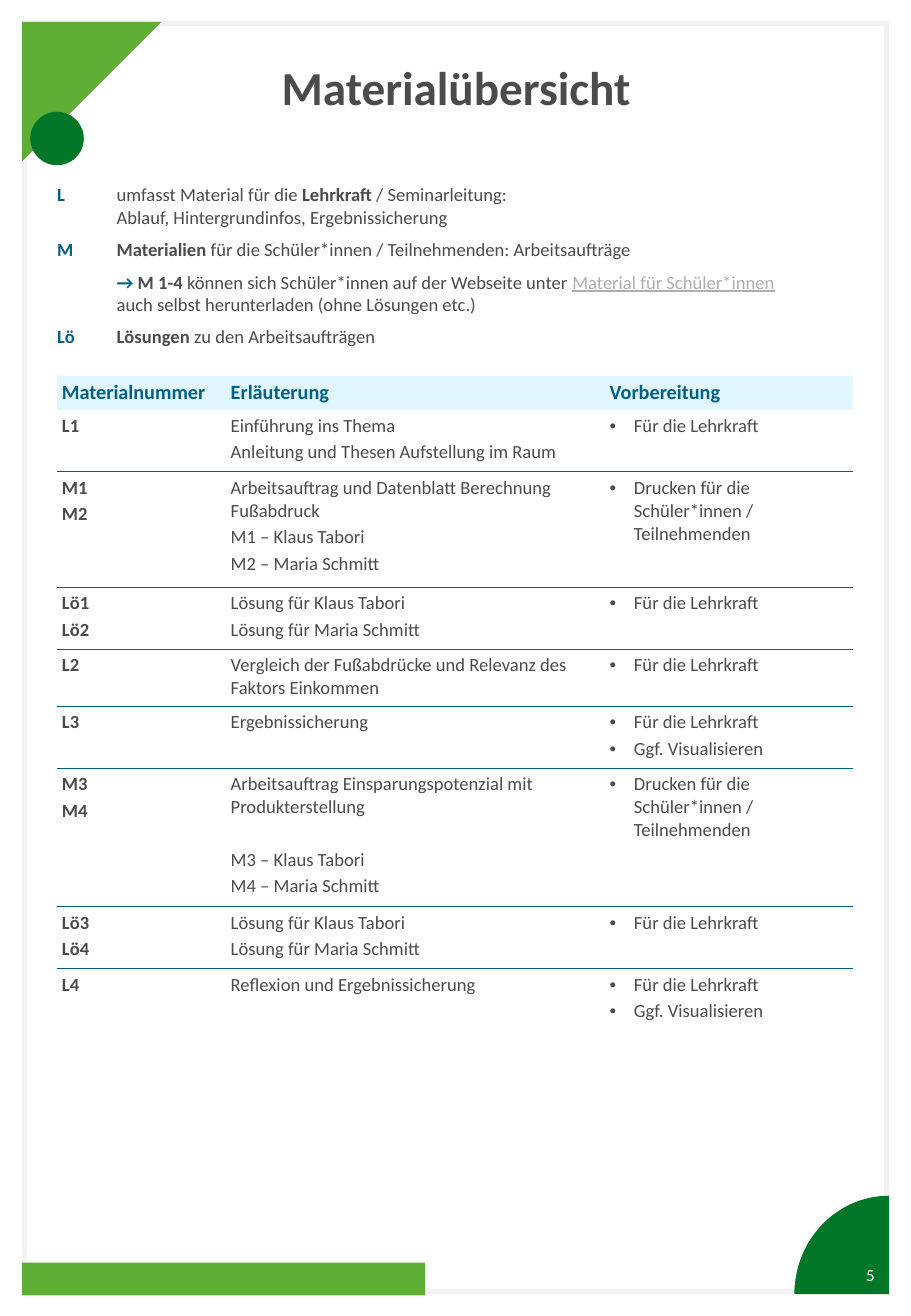
import math
from lxml import etree
from pptx import Presentation
from pptx import util as u
from pptx.dml.color import RGBColor
from pptx.enum import shapes, text
from pptx.oxml.ns import qn

GREY = RGBColor(0x4B, 0x4B, 0x4D)
LINK = RGBColor(0xAE, 0xAE, 0xB0)
BLUE = RGBColor(0x00, 0x5F, 0x85)
PALE_BLUE = RGBColor(0xC4, 0xEF, 0xFF)
GREEN = RGBColor(0x5E, 0xAD, 0x35)
DARK_GREEN = RGBColor(0x00, 0x76, 0x26)
FRAME_GREY = RGBColor(0xF2, 0xF2, 0xF2)
WHITE = RGBColor(0xFF, 0xFF, 0xFF)

HEADERS = ["Materialnummer", "Erläuterung", "Vorbereitung"]
TEACHER = "Für die Lehrkraft"
PRINT = "Drucken für die Schüler*innen / Teilnehmenden"
SHOW = "Ggf. Visualisieren"
SOLUTIONS = ["Lösung für Klaus Tabori", "Lösung für Maria Schmitt"]
ROWS = [
    (0.51, ["L1"], ["Einführung ins Thema", "Anleitung und Thesen Aufstellung im Raum"], [TEACHER]),
    (0.95, ["M1", "M2"], ["Arbeitsauftrag und Datenblatt Berechnung Fußabdruck",
                          "M1 – Klaus Tabori", "M2 – Maria Schmitt"], [PRINT]),
    (0.51, ["Lö1", "Lö2"], SOLUTIONS, [TEACHER]),
    (0.47, ["L2"], ["Vergleich der Fußabdrücke und Relevanz des Faktors Einkommen"], [TEACHER]),
    (0.51, ["L3"], ["Ergebnissicherung"], [TEACHER, SHOW]),
    (1.14, ["M3", "M4"], ["Arbeitsauftrag Einsparungspotenzial mit Produkterstellung",
                          "M3 – Klaus Tabori", "M4 – Maria Schmitt"], [PRINT]),
    (0.51, ["Lö3", "Lö4"], SOLUTIONS, [TEACHER]),
    (0.51, ["L4"], ["Reflexion und Ergebnissicherung"], [TEACHER, SHOW]),
]


class Page:
    font = "Calibri"

    def __init__(self, prs):
        self.s = prs.slides.add_slide(prs.slide_layouts[5])

    def run(self, p, words, size=11, color=GREY, bold=False, underline=False):
        r = p.add_run()
        r.text = words
        r.font.name = self.font
        r.font.size = u.Pt(size)
        r.font.color.rgb = color
        r.font.bold = bold
        if underline:
            r.font.underline = True

    def indent(self, p, left, first):
        ppr = p._p.get_or_add_pPr()
        ppr.set("marL", str(u.Inches(left)))
        ppr.set("indent", str(u.Inches(first)))
        return ppr

    def bullet(self, p):
        ppr = self.indent(p, 0.2, -0.2)
        etree.SubElement(ppr, qn("a:buFont"), typeface="Arial")
        etree.SubElement(ppr, qn("a:buChar"), char="•")

    def paint(self, sp, color):
        sp.shadow.inherit = False
        sp.fill.solid()
        sp.fill.fore_color.rgb = color
        sp.line.fill.background()
        return sp

    def shape(self, kind, box, color):
        return self.paint(self.s.shapes.add_shape(kind, *map(u.Inches, box)), color)

    def outline(self, points, color):
        points = [(u.Inches(x), u.Inches(y)) for x, y in points]
        builder = self.s.shapes.build_freeform(*points[0])
        builder.add_line_segments(points[1:], close=True)
        return self.paint(builder.convert_to_shape(), color)

    def frame(self, tf, inset, anchor):
        tf.word_wrap = True
        tf.auto_size = text.MSO_AUTO_SIZE.NONE
        tf.vertical_anchor = anchor
        tf.margin_left = tf.margin_right = tf.margin_top = tf.margin_bottom = u.Inches(inset)
        return tf

    def title(self, box, words):
        sp = self.s.shapes.title
        sp.left, sp.top, sp.width, sp.height = map(u.Inches, box)
        p = self.frame(sp.text_frame, 0, text.MSO_ANCHOR.MIDDLE).paragraphs[0]
        p.alignment = text.PP_ALIGN.CENTER
        self.run(p, words, 28, bold=True)

    def textbox(self, box, inset=0, anchor=text.MSO_ANCHOR.TOP):
        sp = self.s.shapes.add_textbox(*map(u.Inches, box))
        return self.frame(sp.text_frame, inset, anchor)

    def legend(self, box, entries):
        tf = self.textbox(box)
        for i, (label, runs) in enumerate(entries):
            p = tf.paragraphs[0] if i == 0 else tf.add_paragraph()
            p.space_after = u.Pt(6)
            self.indent(p, 0.49, -0.49 if label else 0)
            if label:
                self.run(p, label + "\t", color=BLUE, bold=True)
            for words, style in runs:
                if words == "\n":
                    p.add_line_break()
                else:
                    self.run(p, words, **style)

    def borders(self, cell, bottom, top):
        tcpr = cell._tc.get_or_add_tcPr()
        for i, (side, shown) in enumerate(zip("LRTB", (False, False, top, bottom))):
            ln = etree.Element(qn("a:ln" + side), w=str(u.Pt(0.5)))
            if shown:
                fill = etree.SubElement(ln, qn("a:solidFill"))
                etree.SubElement(fill, qn("a:srgbClr"), val=str(BLUE))
            else:
                etree.SubElement(ln, qn("a:noFill"))
            tcpr.insert(i, ln)

    def cell(self, cell, lines, bulleted=False, **style):
        cell.margin_left = cell.margin_right = u.Inches(0.04)
        cell.margin_top = cell.margin_bottom = u.Inches(0.04)
        for i, line in enumerate(lines):
            p = cell.text_frame.paragraphs[0] if i == 0 else cell.text_frame.add_paragraph()
            p.space_after = u.Pt(2)
            if bulleted:
                self.bullet(p)
            self.run(p, line, **style)

    def table(self, box, widths, headers, rows):
        gf = self.s.shapes.add_table(len(rows) + 1, len(widths), *map(u.Inches, box))
        table = gf.table
        table.first_row = table.horz_banding = False
        for column, width in zip(table.columns, widths):
            column.width = u.Inches(width)
        table.rows[0].height = u.Inches(0.28)
        for c, header in enumerate(headers):
            cell = table.cell(0, c)
            self.cell(cell, [header], size=12, color=BLUE, bold=True)
            cell.vertical_anchor = text.MSO_ANCHOR.MIDDLE
            cell.fill.solid()
            cell.fill.fore_color.rgb = PALE_BLUE
            tint = cell._tc.tcPr.find(".//" + qn("a:srgbClr"))
            etree.SubElement(tint, qn("a:alpha"), val="50000")
            self.borders(cell, False, False)
        for i, (height, *columns) in enumerate(rows, 1):
            table.rows[i].height = u.Inches(height)
            for c, lines in enumerate(columns):
                cell = table.cell(i, c)
                self.cell(cell, lines, bulleted=c == 2, bold=c == 0)
                cell.fill.background()
                self.borders(cell, i < len(rows), i > 1)
        return table


def main():
    prs = Presentation()
    prs.slide_width, prs.slide_height = u.Inches(7.5), u.Inches(10.83)
    page = Page(prs)
    kinds = shapes.MSO_SHAPE

    border = page.shape(kinds.FRAME, (0.18, 0.17, 7.14, 10.48), FRAME_GREY)
    border.adjustments[0] = 0.006
    page.outline([(0.18, 0.18), (0.18, 1.33), (1.33, 0.18)], GREEN)
    page.shape(kinds.OVAL, (0.25, 0.92, 0.44, 0.44), DARK_GREEN)
    angles = [math.radians(3 * i) for i in range(31)]
    arc = [(7.32 - 0.78 * math.cos(a), 10.65 - 0.81 * math.sin(a)) for a in angles]
    page.outline([(7.32, 10.65)] + arc, DARK_GREEN)
    page.shape(kinds.RECTANGLE, (0.18, 10.39, 3.32, 0.27), GREEN)

    page.title((0.37, 0.36, 6.77, 0.71), "Materialübersicht")

    plain, bold = {}, {"bold": True}
    page.legend((0.47, 1.51, 6.55, 1.4), [
        ("L", [("umfasst Material für die ", plain), ("Lehrkraft", bold),
               (" / Seminarleitung:", plain), ("\n", plain),
               ("Ablauf, Hintergrundinfos, Ergebnissicherung", plain)]),
        ("M", [("Materialien", bold),
               (" für die Schüler*innen / Teilnehmenden: Arbeitsaufträge", plain)]),
        ("", [("→ ", {"color": BLUE, "bold": True}), ("M 1-4 ", bold),
              ("können sich Schüler*innen auf der Webseite unter ", plain),
              ("Material für Schüler*innen", {"color": LINK, "underline": True}), ("\n", plain),
              ("auch selbst herunterladen (ohne Lösungen etc.)", plain)]),
        ("Lö", [("Lösungen", bold), (" zu den Arbeitsaufträgen", plain)]),
    ])

    table = page.table((0.47, 3.09, 6.55, 5.39), (1.39, 3.12, 2.04), HEADERS, ROWS)
    table.cell(6, 1).text_frame.paragraphs[0].space_after = u.Pt(17.4)

    tf = page.textbox((7, 10.29, 0.3, 0.33), 0.05, text.MSO_ANCHOR.BOTTOM)
    tf.margin_left = tf.margin_right = u.Inches(0.1)
    p = tf.paragraphs[0]
    p.alignment = text.PP_ALIGN.RIGHT
    page.run(p, "5", 10, WHITE)

    prs.save("out.pptx")


if __name__ == "__main__":
    main()
